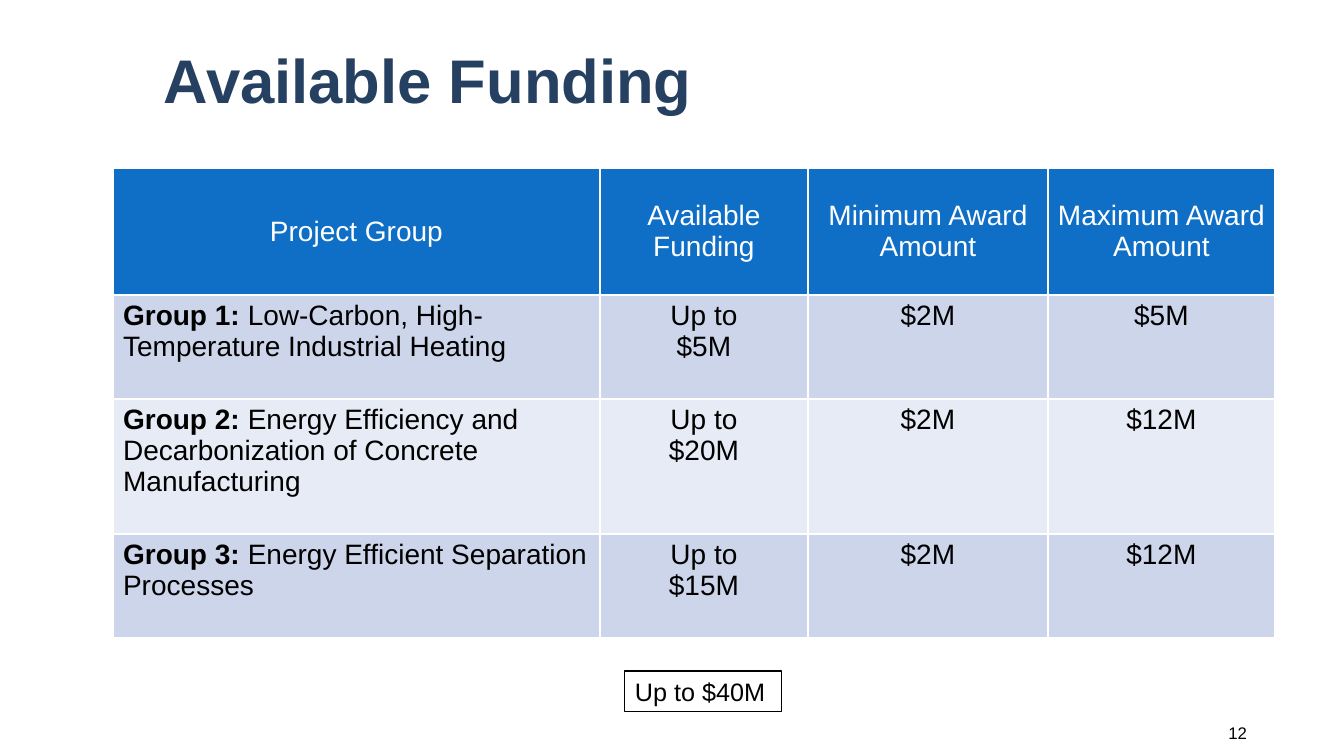
from dataclasses import dataclass

from lxml.etree import SubElement
from pptx import Presentation
from pptx.dml.color import RGBColor
from pptx.enum.shapes import MSO_SHAPE
from pptx.enum.text import MSO_ANCHOR, PP_ALIGN
from pptx.oxml.ns import qn
from pptx.util import Emu, Pt

PX_PER_INCH = 100.8


def px(count):
    return Emu(round(count * 914400 / PX_PER_INCH))


@dataclass(frozen=True)
class Theme:
    font: str = "Arial"
    title: str = "254061"
    ink: str = "000000"
    white: str = "FFFFFF"
    header: str = "0F6FC6"
    bands: tuple = ("CCD5EA", "E7EBF5")
    title_size: int = 44
    table_size: int = 20
    total_size: int = 18
    page_size: int = 12


class FundingSlide:
    def __init__(self, deck, theme):
        self.theme = theme
        self.slide = deck.slides.add_slide(deck.slide_layouts[6])

    def fill_text(self, frame, paragraphs, size, color, align=PP_ALIGN.LEFT):
        """Fill a text frame; each paragraph is a list of (text, bold) runs."""
        frame.word_wrap = True
        for index, runs in enumerate(paragraphs):
            paragraph = frame.paragraphs[0] if index == 0 else frame.add_paragraph()
            paragraph.alignment = align
            for text, bold in runs:
                run = paragraph.add_run()
                run.text = text
                run.font.name = self.theme.font
                run.font.size = Pt(size)
                run.font.bold = bold
                run.font.color.rgb = RGBColor.from_string(color)

    def text(self, bounds, words, size, color, bold=False, align=PP_ALIGN.LEFT):
        frame = self.slide.shapes.add_textbox(*map(px, bounds)).text_frame
        frame.vertical_anchor = MSO_ANCHOR.MIDDLE
        self.fill_text(frame, [[(words, bold)]], size, color, align)
        return frame

    def outlined_box(self, bounds, words, size):
        box = self.slide.shapes.add_shape(MSO_SHAPE.RECTANGLE, *map(px, bounds))
        box.shadow.inherit = False
        box.fill.background()
        box.line.color.rgb = RGBColor.from_string(self.theme.ink)
        box.line.width = Pt(0.75)
        box.text_frame.vertical_anchor = MSO_ANCHOR.TOP
        self.fill_text(box.text_frame, [[(words, False)]], size, self.theme.ink)

    def border(self, cell):
        properties = cell._tc.get_or_add_tcPr()
        for position, side in enumerate(("lnL", "lnR", "lnT", "lnB")):
            edge = SubElement(properties, qn(f"a:{side}"), w=str(Pt(1)))
            fill = SubElement(edge, qn("a:solidFill"))
            SubElement(fill, qn("a:srgbClr"), val=self.theme.white)
            properties.insert(position, edge)

    def cell(self, cell, paragraphs, fill, color, align, anchor):
        cell.fill.solid()
        cell.fill.fore_color.rgb = RGBColor.from_string(fill)
        cell.vertical_anchor = anchor
        self.fill_text(cell.text_frame, paragraphs, self.theme.table_size, color, align)
        self.border(cell)

    def table(self, left, top, widths, heights, headings, groups):
        theme = self.theme
        bounds = (left, top, sum(widths), sum(heights))
        table = self.slide.shapes.add_table(
            len(heights), len(widths), *map(px, bounds)).table
        for column, width in zip(table.columns, widths):
            column.width = px(width)
        for row, height in zip(table.rows, heights):
            row.height = px(height)

        for column, heading in enumerate(headings):
            self.cell(table.cell(0, column), [[(heading, False)]], theme.header,
                      theme.white, PP_ALIGN.CENTER, MSO_ANCHOR.MIDDLE)
        for row, (topic, funding, minimum, maximum) in enumerate(groups, start=1):
            contents = (
                [[(f"Group {row}: ", True), (topic, False)]],
                [[("Up to", False)], [(funding, False)]],
                [[(minimum, False)]],
                [[(maximum, False)]],
            )
            band = theme.bands[(row - 1) % len(theme.bands)]
            for column, paragraphs in enumerate(contents):
                align = PP_ALIGN.CENTER if column else PP_ALIGN.LEFT
                self.cell(table.cell(row, column), paragraphs, band,
                          theme.ink, align, MSO_ANCHOR.TOP)


HEADINGS = ("Project Group", "Available Funding",
            "Minimum Award Amount", "Maximum Award Amount")
GROUPS = (
    ("Low-Carbon, High-Temperature Industrial Heating", "$5M", "$2M", "$5M"),
    ("Energy Efficiency and Decarbonization of Concrete Manufacturing",
     "$20M", "$2M", "$12M"),
    ("Energy Efficient Separation Processes", "$15M", "$2M", "$12M"),
)


def main():
    deck = Presentation()
    deck.slide_width, deck.slide_height = px(1344), px(756)
    theme = Theme()
    funding = FundingSlide(deck, theme)

    title = funding.text((154, 26, 1098, 115), "Available Funding",
                         theme.title_size, theme.title, bold=True)
    title.paragraphs[0].line_spacing = 0.9
    funding.table(113, 168, (487, 208, 240, 227), (127, 104, 135, 104),
                  HEADINGS, GROUPS)
    funding.text((1058, 713, 199, 40), "12", theme.page_size, theme.ink,
                 align=PP_ALIGN.RIGHT)
    funding.outlined_box((625, 671, 157, 41), "Up to $40M", theme.total_size)

    deck.save("out.pptx")


if __name__ == "__main__":
    main()
